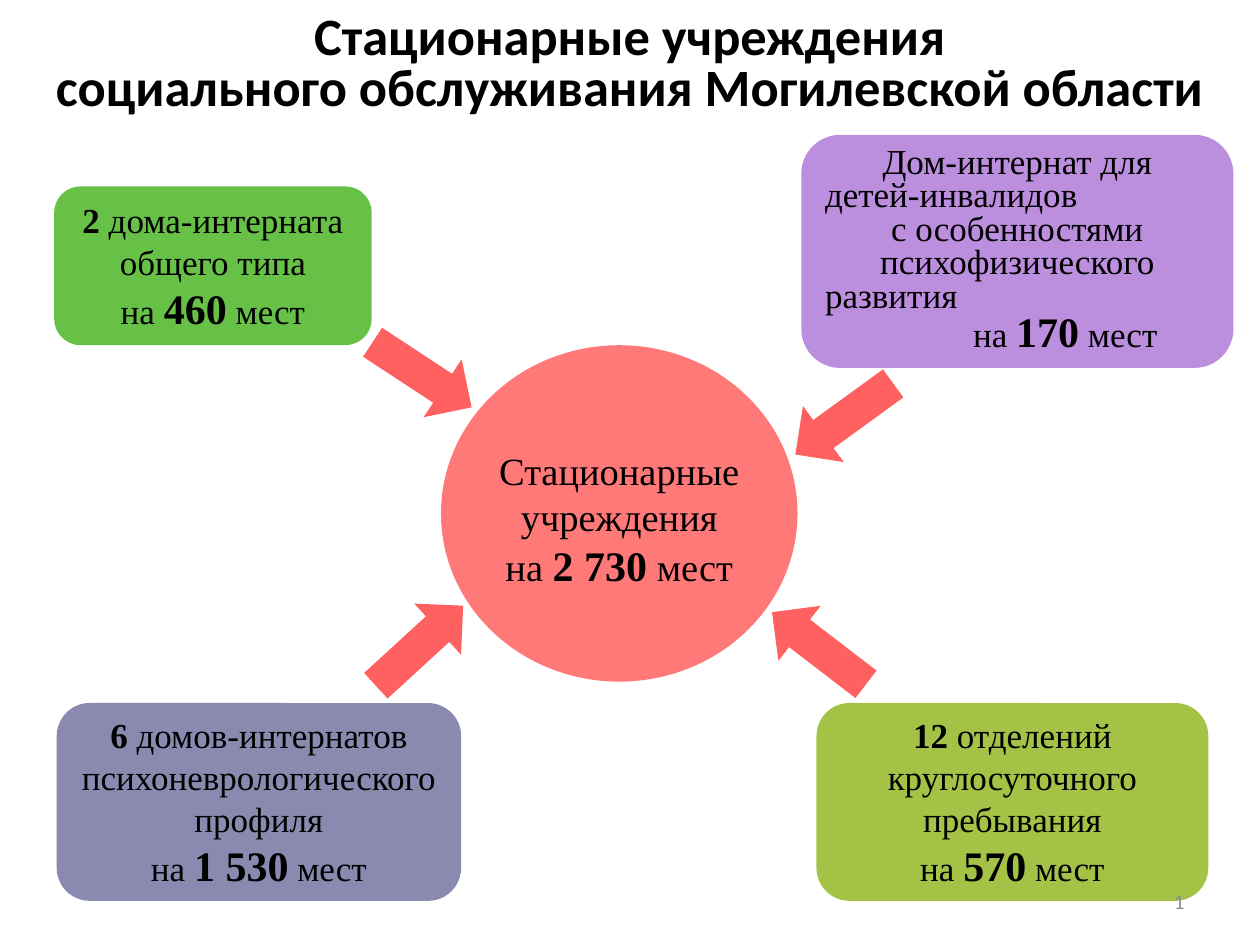
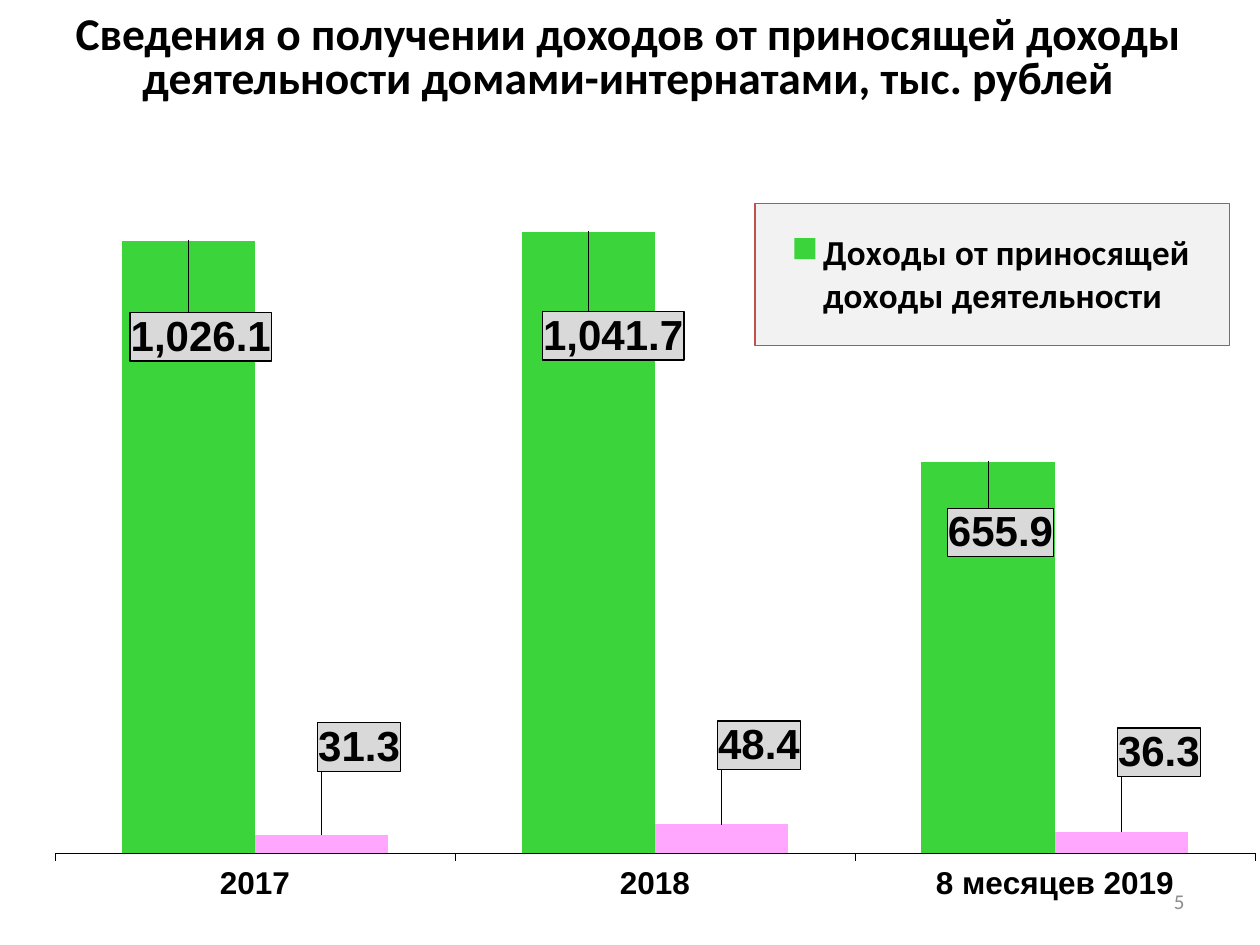
from dataclasses import dataclass

from lxml import etree
from pptx import Presentation
from pptx.chart.data import CategoryChartData
from pptx.dml.color import RGBColor
from pptx.enum.chart import (XL_CHART_TYPE, XL_LABEL_POSITION,
                             XL_LEGEND_POSITION, XL_TICK_MARK)
from pptx.enum.shapes import MSO_SHAPE
from pptx.enum.text import MSO_ANCHOR, MSO_AUTO_SIZE, PP_ALIGN
from pptx.util import Pt

PX = 9144
LEFT, MID, RIGHT = PP_ALIGN.LEFT, PP_ALIGN.CENTER, PP_ALIGN.RIGHT
MIDDLE, BOTTOM = MSO_ANCHOR.MIDDLE, MSO_ANCHOR.BOTTOM
OVAL, CARD, ARROW = MSO_SHAPE.OVAL, MSO_SHAPE.ROUNDED_RECTANGLE, MSO_SHAPE.RIGHT_ARROW
COLUMNS = XL_CHART_TYPE.COLUMN_CLUSTERED
ABOVE = XL_LABEL_POSITION.OUTSIDE_END
SIDE = XL_LEGEND_POSITION.RIGHT
OUT, NONE = XL_TICK_MARK.OUTSIDE, XL_TICK_MARK.NONE
CHART = "http://schemas.openxmlformats.org/drawingml/2006/chart"
DRAW = "http://schemas.openxmlformats.org/drawingml/2006/main"
EXTRA = "http://schemas.microsoft.com/office/drawing/2012/chart"


@dataclass(frozen=True)
class Theme:
    """Colours, fonts and type sizes of the deck."""
    ink: str = "000000"
    paper: str = "FFFFFF"
    gray: str = "8C8C8C"
    hub: str = "FF7979"
    arrow: str = "FF6161"
    green: str = "67C147"
    slate: str = "8A8AB0"
    olive: str = "A4C246"
    lilac: str = "BC8EDE"
    income: str = "3BD53B"
    sales: str = "FFA7FF"
    tag: str = "D9D9D9"
    key: str = "F2F2F2"
    rim: str = "C0504D"
    head: str = "Calibri"
    body: str = "Times New Roman"
    plot: str = "Arial"
    title: int = 30
    small: int = 26
    big: int = 24
    mid: int = 22
    text: int = 20
    axis: int = 18
    page: int = 12
    tight: float = 0.8


T = Theme()


def rgb(code):
    """Return the colour for a hex code."""
    return RGBColor.from_string(code)


def px(*nums):
    """Turn lengths in px into EMU."""
    return [num * PX for num in nums]


def style(font, name, size, bold=False, color=T.ink):
    """Set the look of a font."""
    font.name, font.size, font.bold = name, Pt(size), bold
    font.color.rgb = rgb(color)


def lines(frame, text, name, size, bold=False, color=T.ink, align=MID, gap=None):
    """Fill a frame with lines of one look."""
    frame.text = text
    for para in frame.paragraphs:
        para.alignment = align
        if gap:
            para.line_spacing = gap
        for run in para.runs:
            style(run.font, name, size, bold, color)


def solid(slide, kind, box, color):
    """Add a flat shape with no outline."""
    shape = slide.shapes.add_shape(kind, *px(*box))
    shape.shadow.inherit = False
    shape.fill.solid()
    shape.fill.fore_color.rgb = rgb(color)
    shape.line.fill.background()
    return shape


def place(slide, kind, box, color, lead, text, seats, size=T.text, gap=None):
    """Add a shape that tells a kind of home and its number of places."""
    frame = solid(slide, kind, box, color).text_frame
    frame.word_wrap = True
    frame.vertical_anchor = MIDDLE
    rows = [[("на ", size, False), (seats, T.big, True), (" мест", size, False)]]
    if lead:
        rows.insert(0, [(lead, size, True), (text, size, False)])
    else:
        lines(frame, text, T.body, size, gap=gap)
    for num, row in enumerate(rows):
        para = frame.paragraphs[0] if lead and num == 0 else frame.add_paragraph()
        para.alignment = MID
        if gap:
            para.line_spacing = gap
        for part, pts, bold in row:
            run = para.add_run()
            run.text = part
            style(run.font, T.body, pts, bold)
    return frame


def banner(slide, box, text):
    """Add the heading as a table of one cell."""
    table = slide.shapes.add_table(1, 1, *px(*box)).table
    table.first_row = table.horz_banding = False
    cell = table.cell(0, 0)
    cell.fill.solid()
    cell.fill.fore_color.rgb = rgb(T.paper)
    cell.vertical_anchor = MIDDLE
    lines(cell.text_frame, text, T.head, T.title, True, gap=T.tight)


def number(slide, text):
    """Add the page number."""
    frame = slide.shapes.add_textbox(*px(717, 695, 233, 40)).text_frame
    frame.word_wrap = True
    frame.vertical_anchor = MIDDLE
    lines(frame, text, T.head, T.page, color=T.gray, align=RIGHT)


def homes(deck):
    """Build the slide with the hub and the four kinds of homes."""
    slide = deck.slides.add_slide(deck.slide_layouts[6])
    banner(slide, (0, -3, 1000, 110),
           "Стационарные учреждения\nсоциального обслуживания Могилевской области")
    hub = place(slide, OVAL, (350, 274, 283, 267), T.hub, "",
                "Стационарные учреждения", "2 730", T.mid)
    hub.margin_left = hub.margin_right = hub.margin_bottom = 0
    hub.margin_top = 8 * PX
    for box, color, lead, text, seats in (
            ((43, 148, 252, 126), T.green, "2", " дома-интерната общего типа", "460"),
            ((45, 558, 321, 157), T.slate, "6",
             " домов-интернатов психоневрологического профиля", "1 530"),
            ((648, 558, 311, 157), T.olive, "12",
             " отделений круглосуточного пребывания", "570")):
        place(slide, CARD, box, color, lead, text, seats)
    for box, turn in (((288, 270, 94, 55), 33.3), ((622, 305, 96, 55), 144),
                      ((286, 485, 94, 55), 317.5), ((603, 487, 94, 55), 217.5)):
        solid(slide, ARROW, box, T.arrow).rotation = turn
    number(slide, "1")
    kids = place(slide, CARD, (636, 107, 343, 185), T.lilac, "",
                 "Дом-интернат для\nдетей-инвалидов\nс особенностями\n"
                 "психофизического\nразвития", "170", gap=T.tight)
    for row in (1, 4):
        kids.paragraphs[row].alignment = LEFT
    kids.paragraphs[5]._p.get_or_add_pPr().set("marL", str(76 * PX))


def layout(**parts):
    """Return a manual chart layout with the given parts."""
    root = etree.Element(f"{{{CHART}}}layout")
    manual = etree.SubElement(root, f"{{{CHART}}}manualLayout")
    for name, val in parts.items():
        etree.SubElement(manual, f"{{{CHART}}}{name}").set("val", str(val))
    return root


def clear(node, name):
    """Remove the children of one name from a chart node."""
    for old in node.xpath(f"c:{name}"):
        node.remove(old)


def panel(node, fill, edge):
    """Give a chart part a fill and a thin edge."""
    clear(node, "spPr")
    node.xpath("c:txPr")[0].addprevious(etree.fromstring(
        f'<c:spPr xmlns:c="{CHART}" xmlns:a="{DRAW}">'
        f'<a:solidFill><a:srgbClr val="{fill}"/></a:solidFill>'
        f'<a:ln w="9525"><a:solidFill><a:srgbClr val="{edge}"/></a:solidFill></a:ln>'
        '</c:spPr>'))


def unlead(node):
    """Turn off the leader lines of a set of labels."""
    node.append(etree.fromstring(
        f'<c:extLst xmlns:c="{CHART}" xmlns:x="{EXTRA}">'
        '<c:ext uri="{CE6537A1-D6FC-4f65-9D91-7224C49458BB}">'
        '<x:showLeaderLines val="0"/></c:ext></c:extLst>'))


def tags(series, color, shifts):
    """Colour a series and put a framed value by each column."""
    series.format.fill.solid()
    series.format.fill.fore_color.rgb = rgb(color)
    series.invert_if_negative = False
    labels = series.data_labels
    labels.show_value = True
    labels.number_format, labels.number_format_is_linked = "#,##0.0", False
    labels.position = ABOVE
    style(labels.font, T.plot, T.big, True)
    group = series._element.xpath("c:dLbls")[0]
    for num, (left, top) in enumerate(shifts):
        label = series.points[num].data_label
        style(label.font, T.plot, T.big, True)
        label.position = ABOVE
        node = group.xpath(f"c:dLbl[c:idx/@val='{num}']")[0]
        node.insert(1, layout(x=left, y=top))
        node.insert(2, etree.Element(f"{{{CHART}}}numFmt", formatCode="#,##0.0",
                                     sourceLinked="0"))
        panel(node, T.tag, T.ink)
    panel(group, T.tag, T.ink)
    unlead(group)


def legend(chart):
    """Add the framed legend with its first entry only."""
    chart.has_legend = True
    key = chart.legend
    key.position, key.include_in_layout = SIDE, False
    style(key.font, T.head, T.text, True)
    node = key._element
    clear(node, "layout")
    entry = etree.Element(f"{{{CHART}}}legendEntry")
    for name in ("idx", "delete"):
        etree.SubElement(entry, f"{{{CHART}}}{name}").set("val", "1")
    node.insert(1, entry)
    node.insert(2, layout(xMode="edge", yMode="edge", x=0.6, y=0.11, w=0.38, h=0.17))
    panel(node, T.key, T.rim)


def graph(slide, box):
    """Add the column chart of income by year."""
    data = CategoryChartData(number_format="#,##0.0")
    data.categories = ["2017", "2018", "8 месяцев 2019"]
    data.add_series("Доходы от приносящей доходы деятельности", (1026.1, 1041.7, 655.9))
    data.add_series("", (31.3, 48.4, 36.3))
    chart = slide.shapes.add_chart(COLUMNS, *px(*box), data).chart
    chart.has_title = False
    style(chart.font, T.plot, T.axis, True)
    bars = chart.plots[0]
    bars.gap_width, bars.overlap, bars.vary_by_categories = 100, 0, False
    tags(bars.series[0], T.income, ((0.01, 0.15), (0.02, 0.16), (0.01, 0.12)))
    tags(bars.series[1], T.sales, ((0.03, -0.07), (0.03, -0.06), (0.03, -0.06)))
    years, value = chart.category_axis, chart.value_axis
    years.major_tick_mark, years.minor_tick_mark = OUT, NONE
    years.format.line.color.rgb = rgb(T.ink)
    years.format.line.width = Pt(0.22)
    style(years.tick_labels.font, T.plot, T.axis, True)
    value.visible = value.has_major_gridlines = False
    value.minimum_scale, value.maximum_scale = 0, 1200
    area = chart._chartSpace.xpath("c:chart/c:plotArea")[0]
    clear(area, "layout")
    area.insert(0, layout(layoutTarget="inner", xMode="edge", yMode="edge",
                          x=0.04, y=0.03, w=0.96, h=0.86))
    legend(chart)


def income(deck):
    """Build the slide with the income chart."""
    slide = deck.slides.add_slide(deck.slide_layouts[5])
    title = slide.shapes.title
    title.left, title.top, title.width, title.height = px(0, 5, 1000, 77)
    frame = title.text_frame
    frame.auto_size, frame.word_wrap = MSO_AUTO_SIZE.NONE, True
    frame.vertical_anchor = BOTTOM
    frame.margin_left = frame.margin_top = frame.margin_bottom = 0
    frame.margin_right = 2 * PX
    lines(frame, "Сведения о получении доходов от приносящей доходы "
          "деятельности домами-интернатами, тыс. рублей",
          T.head, T.small, True, gap=T.tight)
    graph(slide, (4, 89, 992, 661))
    number(slide, "5")


def main():
    """Build and save the deck."""
    deck = Presentation()
    deck.slide_width, deck.slide_height = px(1000, 750)
    homes(deck)
    income(deck)
    deck.save("out.pptx")


if __name__ == "__main__":
    main()
